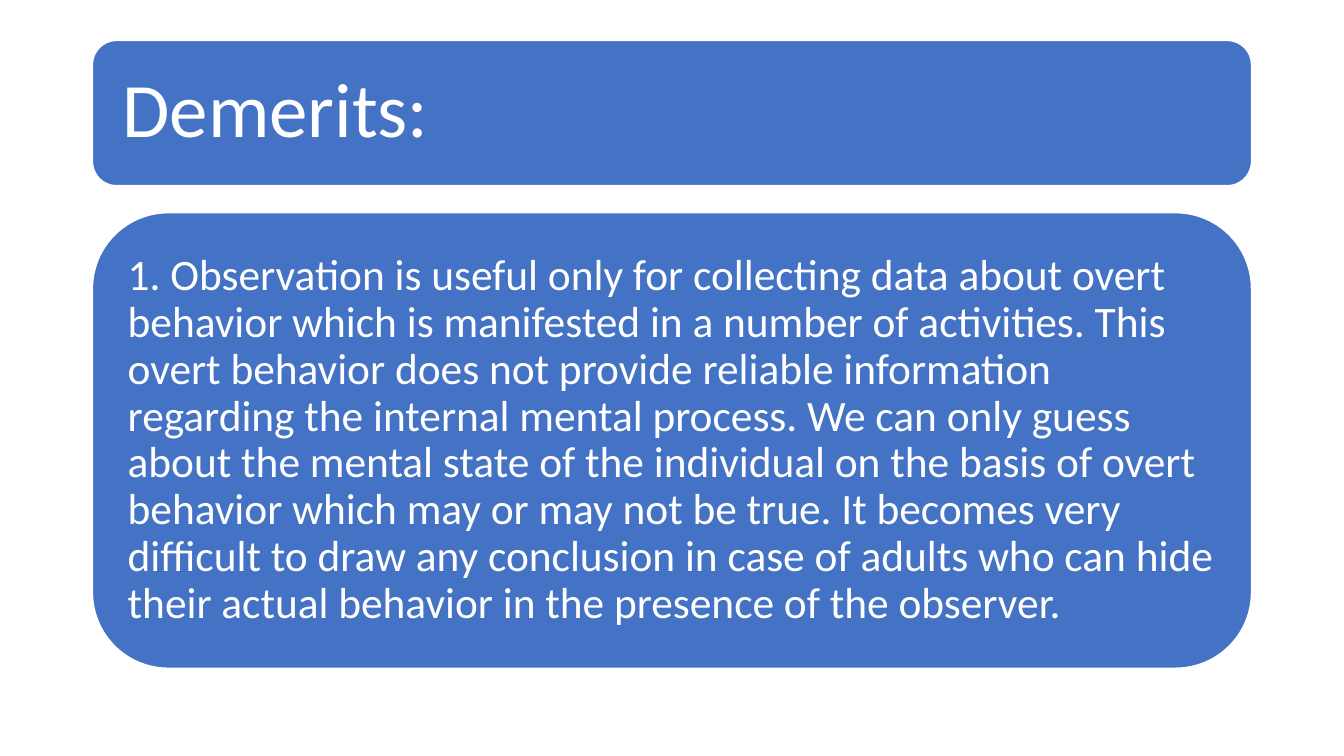
from pptx import Presentation
from pptx.dml.color import RGBColor
from pptx.enum.shapes import MSO_SHAPE
from pptx.enum.text import MSO_ANCHOR, PP_ALIGN
from pptx.util import Cm, Pt

COLORS = {"panel": "4472C4", "outline": "FFFFFF", "text": "FFFFFF"}
FONT = "Calibri"

HEADING = "Demerits:"
DEMERIT = (
    "1. Observation is useful only for collecting data about overt behavior "
    "which is manifested in a number of activities. This overt behavior does "
    "not provide reliable information regarding the internal mental process. "
    "We can only guess about the mental state of the individual on the basis "
    "of overt behavior which may or may not be true. It becomes very difficult "
    "to draw any conclusion in case of adults who can hide their actual "
    "behavior in the presence of the observer."
)


def color(name):
    return RGBColor.from_string(COLORS[name])


def add_panel(page, box, text, size, inset):
    """Place a rounded panel with its text in box (left, top, width, height in cm)."""
    panel = page.shapes.add_shape(
        MSO_SHAPE.ROUNDED_RECTANGLE, *(Cm(length) for length in box))
    panel.shadow.inherit = False
    panel.fill.solid()
    panel.fill.fore_color.rgb = color("panel")
    panel.line.color.rgb = color("outline")
    panel.line.width = Pt(1)

    # Text
    frame = panel.text_frame
    frame.word_wrap = True
    frame.vertical_anchor = MSO_ANCHOR.MIDDLE
    frame.margin_left = frame.margin_right = Cm(inset)
    frame.margin_top = frame.margin_bottom = Cm(inset)
    para = frame.paragraphs[0]
    para.alignment = PP_ALIGN.LEFT
    para.line_spacing = 0.9
    span = para.add_run()
    span.text = text
    span.font.name = FONT
    span.font.size = Pt(size)
    span.font.color.rgb = color("text")


def build_demerits(page, box):
    """Stack the heading panel over the body panel inside box."""
    left, top, width, height = box
    heading_height, gap = 3.66, 0.68
    body_offset = heading_height + gap

    # Heading
    add_panel(page, (left, top, width, heading_height), HEADING, 55, 0.58)

    # Body
    add_panel(page, (left, top + body_offset, width, height - body_offset),
              DEMERIT, 31, 0.33)


def main():
    deck = Presentation()
    deck.slide_width, deck.slide_height = Cm(33.87), Cm(19.05)
    page = deck.slides.add_slide(deck.slide_layouts[6])
    build_demerits(page, (2.33, 1.02, 29.21, 15.82))
    deck.save("out.pptx")


if __name__ == "__main__":
    main()
